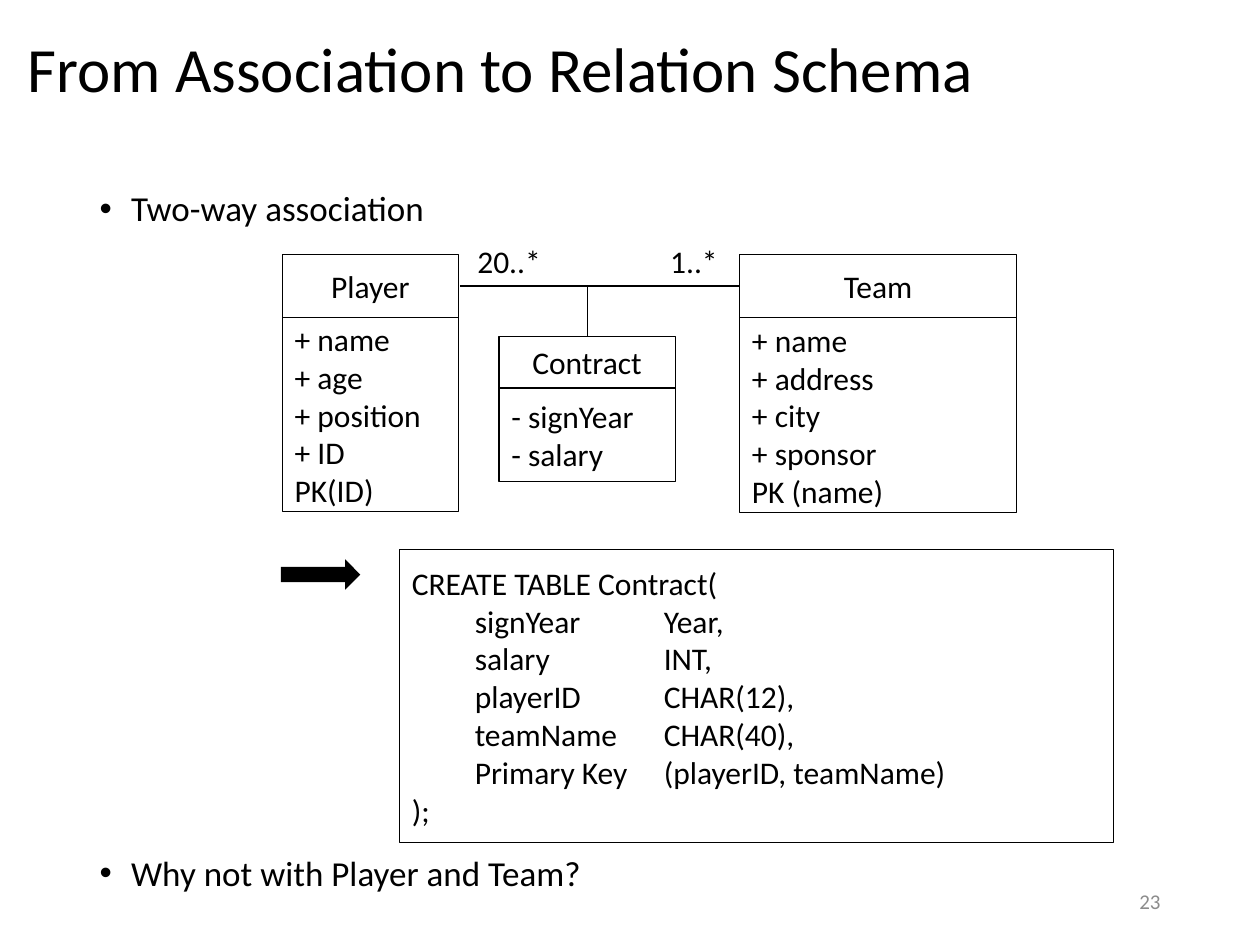
"""Build a slide that maps a two-way association to a relation schema."""
from dataclasses import dataclass

from lxml.etree import SubElement
from pptx import Presentation
from pptx.dml.color import RGBColor
from pptx.enum.shapes import MSO_CONNECTOR as Connector, MSO_SHAPE as Shape
from pptx.enum.text import MSO_ANCHOR as Anchor, MSO_AUTO_SIZE as AutoSize, PP_ALIGN as Align
from pptx.oxml.ns import qn
from pptx.util import Inches, Pt

BLACK = "000000"
GREY = "8C8C8C"


@dataclass(frozen=True)
class Frame:
    left: float
    top: float
    width: float
    height: float

    def lengths(self) -> tuple:
        return tuple(Inches(n) for n in (self.left, self.top, self.width, self.height))


@dataclass(frozen=True)
class UmlClass:
    name: str
    members: tuple[str, ...]
    left: float
    top: float
    width: float
    header_height: float
    members_height: float


@dataclass(frozen=True)
class Line:
    start: tuple[float, float]
    end: tuple[float, float]
    weight: float


CLASSES = (
    UmlClass("Player", ("+ name", "+ age", "+ position", "+ ID", "PK(ID)"),
             2.24, 2.02, 1.4, 0.5, 1.54),
    UmlClass("Team", ("+ name", "+ address", "+ city", "+ sponsor", "PK (name)"),
             5.87, 2.02, 2.2, 0.5, 1.55),
    UmlClass("Contract", ("- signYear", "- salary"), 3.96, 2.67, 1.4, 0.41, 0.74),
)
LINES = (
    Line((3.65, 2.27), (5.87, 2.27), 0.75),
    Line((4.66, 2.27), (4.66, 2.67), 0.5),
)
MULTIPLICITIES = (("20..*", 3.69), ("1..*", 5.22))
STATEMENT = (
    "CREATE TABLE Contract(",
    "\tsignYear\t\tYear,",
    "\tsalary\t\tINT,",
    "\tplayerID\t\tCHAR(12),",
    "\tteamName\tCHAR(40),",
    "\tPrimary Key\t(playerID, teamName)",
    ");",
)


def color(value: str) -> RGBColor:
    return RGBColor.from_string(value)


def write(shape, lines: tuple[str, ...], size: float = 18, align=Align.LEFT,
          anchor=Anchor.MIDDLE, text_color: str = BLACK) -> None:
    frame = shape.text_frame
    frame.text = "\n".join(lines)
    frame.word_wrap = True
    frame.auto_size = AutoSize.NONE
    frame.vertical_anchor = anchor
    for paragraph in frame.paragraphs:
        paragraph.alignment = align
        for run in paragraph.runs:
            run.font.name = "Calibri"
            run.font.size = Pt(size)
            run.font.color.rgb = color(text_color)


def place(shape, frame: Frame) -> None:
    shape.left, shape.top, shape.width, shape.height = frame.lengths()


def add_box(slide, frame: Frame, lines: tuple[str, ...], align=Align.LEFT) -> None:
    shape = slide.shapes.add_shape(Shape.RECTANGLE, *frame.lengths())
    shape.shadow.inherit = False
    shape.fill.background()
    shape.line.color.rgb = color(BLACK)
    shape.line.width = Pt(0.75)
    write(shape, lines, align=align)


def add_class(slide, item: UmlClass) -> None:
    header = Frame(item.left, item.top, item.width, item.header_height)
    members = Frame(item.left, item.top + item.header_height, item.width, item.members_height)
    add_box(slide, header, (item.name,), Align.CENTER)
    add_box(slide, members, item.members)


def add_line(slide, line: Line) -> None:
    ends = (Inches(n) for n in line.start + line.end)
    connector = slide.shapes.add_connector(Connector.STRAIGHT, *ends)
    connector.line.color.rgb = color(BLACK)
    connector.line.width = Pt(line.weight)
    SubElement(connector._element.spPr, qn("a:effectLst"))


def add_label(slide, frame: Frame, text: str, **style) -> None:
    write(slide.shapes.add_textbox(*frame.lengths()), (text,), **style)


def add_arrow(slide, frame: Frame) -> None:
    arrow = slide.shapes.add_shape(Shape.RIGHT_ARROW, *frame.lengths())
    arrow.shadow.inherit = False
    arrow.fill.solid()
    arrow.fill.fore_color.rgb = color(BLACK)
    arrow.line.fill.background()


def fill_placeholders(slide) -> None:
    title, body = slide.placeholders
    place(title, Frame(0.12, 0.08, 9.76, 0.99))
    write(title, ("From Association to Relation Schema",), size=36)
    title.text_frame.paragraphs[0].line_spacing = 0.9
    place(body, Frame(0.69, 1.47, 8.62, 5.75))
    write(body, ("Two-way association", "Why not with Player and Team?"),
          size=20, anchor=Anchor.TOP)
    for paragraph, space in zip(body.text_frame.paragraphs, (10, 358)):
        paragraph.line_spacing = 0.9
        paragraph.space_before = Pt(space)
        properties = paragraph._p.get_or_add_pPr()
        properties.set("marL", str(Inches(0.25)))
        properties.set("indent", str(Inches(-0.25)))


def main() -> None:
    presentation = Presentation()
    presentation.slide_width, presentation.slide_height = Inches(10), Inches(7.5)
    slide = presentation.slides.add_slide(presentation.slide_layouts[1])
    fill_placeholders(slide)
    for item in CLASSES:
        add_class(slide, item)
    for line in LINES:
        add_line(slide, line)
    for text, left in MULTIPLICITIES:
        add_label(slide, Frame(left, 1.87, 0.92, 0.4), text)
    add_box(slide, Frame(3.17, 4.36, 5.67, 2.33), STATEMENT)
    add_arrow(slide, Frame(2.23, 4.44, 0.63, 0.24))
    add_label(slide, Frame(7.06, 6.95, 2.25, 0.4), "23",
              size=12, align=Align.RIGHT, text_color=GREY)
    presentation.save("out.pptx")


if __name__ == "__main__":
    main()
